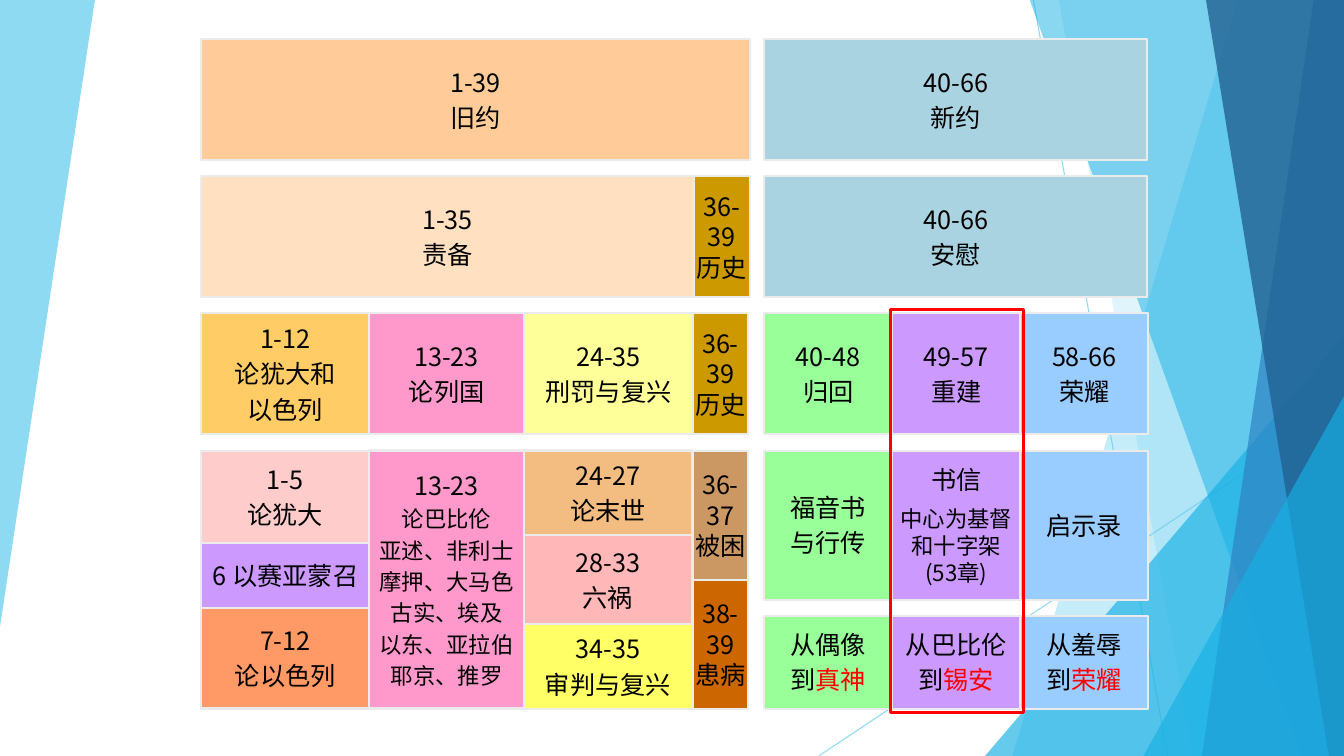
from dataclasses import dataclass

from lxml.etree import SubElement
from pptx import Presentation
from pptx.dml.color import RGBColor
from pptx.enum.shapes import MSO_CONNECTOR, MSO_SHAPE
from pptx.enum.text import MSO_ANCHOR, PP_ALIGN
from pptx.oxml.ns import qn
from pptx.util import Inches, Pt


@dataclass(frozen=True)
class Theme:
    """Colours, font and type sizes of the slide."""
    font: str = "Noto Sans CJK SC"
    body: int = 18
    small: int = 16
    ink: str = "000000"
    accent: str = "FF0000"
    border: str = "EBEBEB"
    sky: str = "5FCBEF"
    cyan: str = "17B0E4"
    blue: str = "2E83C3"
    navy: str = "226292"
    orange: str = "FFCC99"
    peach: str = "FFE0C1"
    amber: str = "FFCC66"
    gold: str = "CC9900"
    tan: str = "CB9763"
    brown: str = "CC6600"
    sand: str = "F3BD81"
    coral: str = "FF9966"
    rose: str = "FFCCCC"
    salmon: str = "FFB7B7"
    pink: str = "FF99CC"
    pale_yellow: str = "FFFF99"
    yellow: str = "FFFF66"
    teal: str = "A9D3E1"
    green: str = "99FF99"
    purple: str = "CC99FF"
    light_blue: str = "99CCFF"


class Chart:
    """Draws the elements of one slide in one style."""

    def __init__(self, s, theme):
        """Keep the slide and its theme."""
        self.s = s
        self.t = theme

    def _tint(self, fill, color, alpha=100):
        """Apply a solid colour with an opacity in percent."""
        fill.solid()
        fill.fore_color.rgb = RGBColor.from_string(color)
        if alpha < 100:
            clr = fill._xPr.find(qn("a:solidFill"))[0]
            SubElement(clr, qn("a:alpha"), val=str(alpha * 1000))

    def _facet(self, sp, color, alpha):
        """Style a borderless translucent shape."""
        sp.shadow.inherit = False
        self._tint(sp.fill, color, alpha)
        sp.line.fill.background()

    def polygon(self, points, color, alpha):
        """Draw a closed translucent outline."""
        pts = [(Inches(x), Inches(y)) for x, y in points]
        fb = self.s.shapes.build_freeform(*pts[0])
        fb.add_line_segments(pts[1:], close=True)
        self._facet(fb.convert_to_shape(), color, alpha)

    def band(self, top_x, bottom_x, color, alpha):
        """Draw a facet that reaches the right edge."""
        self.polygon([(top_x, -0.01), (13.33, -0.01), (13.33, 7.5), (bottom_x, 7.5)], color, alpha)

    def corner(self, left, top, color, alpha):
        """Draw a right triangle in the bottom right corner."""
        sp = self.s.shapes.add_shape(MSO_SHAPE.ISOSCELES_TRIANGLE, Inches(left), Inches(top),
                                     Inches(13.33 - left), Inches(7.5 - top))
        sp.adjustments[0] = 1
        self._facet(sp, color, alpha)

    def line(self, x1, y1, x2, y2, color, alpha):
        """Draw a thin translucent line."""
        c = self.s.shapes.add_connector(MSO_CONNECTOR.STRAIGHT, Inches(x1), Inches(y1),
                                        Inches(x2), Inches(y2))
        c.line.width = Pt(0.75)
        self._tint(c.line.fill, color, alpha)
        SubElement(c._element.spPr, qn("a:effectLst"))

    def box(self, left, top, width, height, border, weight):
        """Draw an unfilled rectangle."""
        sp = self.s.shapes.add_shape(MSO_SHAPE.RECTANGLE, Inches(left), Inches(top),
                                     Inches(width), Inches(height))
        sp.shadow.inherit = False
        sp.fill.background()
        sp.line.color.rgb = RGBColor.from_string(border)
        sp.line.width = Pt(weight)
        return sp

    def cell(self, left, top, width, height, color, text, rest=None, gaps=(0.2, 0.2)):
        """Draw a filled cell; a bar in a line starts its accented part."""
        sp = self.box(left, top, width, height, self.t.border, 1.5)
        self._tint(sp.fill, color)
        tf = sp.text_frame
        tf.word_wrap = False
        tf.vertical_anchor = MSO_ANCHOR.MIDDLE
        tf.text = text
        for i, p in enumerate(tf.paragraphs):
            size = rest if rest and i else self.t.body
            p.alignment = PP_ALIGN.CENTER
            p.space_after = Pt(size * gaps[min(i, 1)])
            plain, _, marked = p.text.partition("|")
            p.text = plain
            if marked:
                p.add_run().text = marked
            for r, ink in zip(p.runs, (self.t.ink, self.t.accent)):
                r.font.size = Pt(size)
                r.font.name = self.t.font
                r.font.color.rgb = RGBColor.from_string(ink)
                SubElement(r._r.get_or_add_rPr(), qn("a:ea"), typeface=self.t.font)

    def stack(self, left, top, width, cells, **style):
        """Pile cells of given heights on each other."""
        for height, color, text in cells:
            self.cell(left, top, width, height, color, text, **style)
            top += height


def draw_background(chart, t):
    """Draw the facets at both edges."""
    chart.polygon([(0, 0), (0.94, -0.01), (0.94, 0.01), (0, 6.22)], t.sky, 70)
    chart.line(10.25, 0, 11.58, 7.5, t.sky, 70)
    chart.line(13.33, 4.03, 8.12, 7.5, t.sky, 70)
    chart.band(12.28, 10.04, t.sky, 36)
    chart.band(10.5, 11.83, t.sky, 20)
    chart.corner(9.77, 3.33, t.cyan, 66)
    chart.band(10.21, 12.91, t.cyan, 50)
    chart.band(13.03, 11.92, t.blue, 70)
    chart.band(11.96, 13.18, t.navy, 80)
    chart.corner(11.34, 3.93, t.cyan, 66)


def draw_outline(chart, t):
    """Draw the chapter outline, old part at left and new at right."""
    rows = [0.39 + 1.36 * i for i in range(4)]
    high = 1.2
    judah, nations, woes, history = 1.99, 3.66, 5.2, 6.87
    new, part = 7.58, 1.27
    tight = (0, 0)

    chart.cell(judah, rows[0], 5.45, high, t.orange, "1-39\n旧约")
    chart.cell(judah, rows[1], 4.9, high, t.peach, "1-35\n责备")
    for top, color, text in ((rows[0], t.teal, "40-66\n新约"), (rows[1], t.teal, "40-66\n安慰")):
        chart.cell(new, top, 3.8, high, color, text)
    for top, left, width in ((rows[1], 6.88, 0.56), (rows[2], history, 0.55)):
        chart.cell(left, top, width, high, t.gold, "36-\n39\n历史", gaps=tight)

    chart.cell(judah, rows[2], 1.68, high, t.amber, "1-12\n论犹大和\n以色列")
    chart.cell(nations, rows[2], 1.54, high, t.pink, "13-23\n论列国")
    chart.cell(woes, rows[2], 1.67, high, t.pale_yellow, "24-35\n刑罚与复兴")

    chart.stack(judah, rows[3], 1.68, [(0.92, t.rose, "1-5\n论犹大"),
                                       (0.64, t.purple, "6 以赛亚蒙召"),
                                       (1, t.coral, "7-12\n论以色列")])
    chart.cell(nations, rows[3], 1.54, 2.56, t.pink,
               "13-23\n论巴比伦\n亚述、非利士\n摩押、大马色\n古实、埃及\n以东、亚拉伯\n耶京、推罗",
               rest=t.small)
    chart.stack(woes, rows[3], 1.66, [(0.84, t.sand, "24-27\n论末世"),
                                      (0.88, t.salmon, "28-33\n六祸"),
                                      (0.84, t.yellow, "34-35\n审判与复兴")])
    chart.stack(history, rows[3], 0.55, [(1.28, t.tan, "36-\n37\n被困"),
                                         (1.28, t.brown, "38-\n39\n患病")], gaps=tight)

    parts = [
        (t.green, "40-48\n归回", "福音书\n与行传", "从偶像\n到|真神", {}),
        (t.purple, "49-57\n重建", "书信\n中心为基督\n和十字架\n(53章)", "从巴比伦\n到|锡安",
         {"rest": t.small, "gaps": (0.4, 0)}),
        (t.light_blue, "58-66\n荣耀", "启示录", "从羞辱\n到|荣耀", {}),
    ]
    for i, (color, chapters, books, change, style) in enumerate(parts):
        left = new + part * i
        chart.cell(left, rows[2], part, high, color, chapters)
        chart.cell(left, rows[3], part, 1.48, color, books, **style)
        chart.cell(left, 6.11, part, 0.92, color, change)
    chart.box(8.83, 3.07, 1.32, 4, t.accent, 2.25)


def main():
    """Build and save the slide."""
    prs = Presentation()
    prs.slide_width = Inches(13.33)
    prs.slide_height = Inches(7.5)
    theme = Theme()
    chart = Chart(prs.slides.add_slide(prs.slide_layouts[6]), theme)
    draw_background(chart, theme)
    draw_outline(chart, theme)
    prs.save("out.pptx")


if __name__ == "__main__":
    main()
